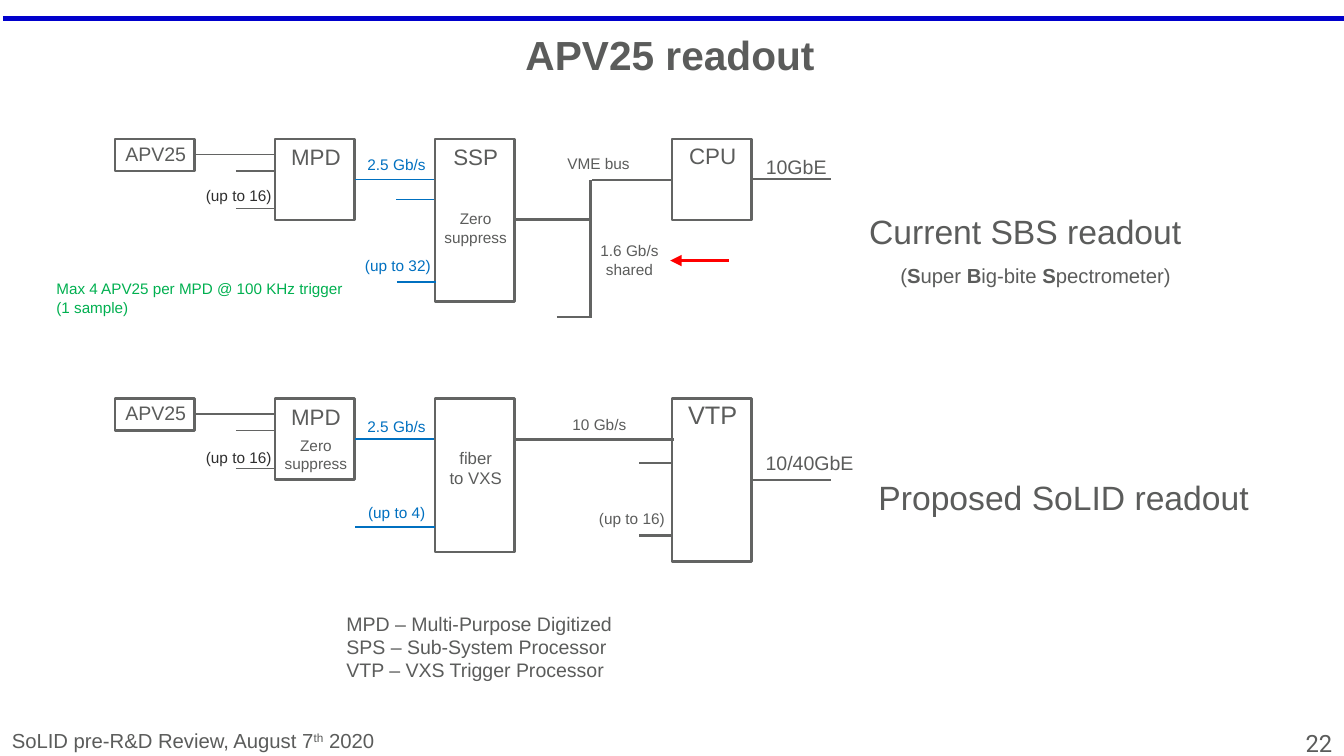
from pptx import Presentation
from pptx.dml.color import RGBColor
from pptx.enum.shapes import MSO_CONNECTOR, MSO_SHAPE
from pptx.enum.text import MSO_ANCHOR, MSO_AUTO_SIZE, PP_ALIGN
from pptx.oxml.ns import qn
from pptx.util import Pt
from lxml.etree import SubElement

GREY = RGBColor(0x5B, 0x5C, 0x5B)
OUTLINE = RGBColor(0x63, 0x64, 0x63)
DARK = RGBColor(0x2E, 0x2E, 0x2E)
BLUE = RGBColor(0x00, 0x70, 0xC0)
GREEN = RGBColor(0x00, 0xB0, 0x50)
RED = RGBColor(0xFF, 0x00, 0x00)
RULE_BLUE = RGBColor(0x00, 0x00, 0xCC)

LEFT, CENTER, RIGHT = PP_ALIGN.LEFT, PP_ALIGN.CENTER, PP_ALIGN.RIGHT
SMALL, MEDIUM, LARGE, HEADING = 12.1, 15.4, 17.6, 26.5
BLOCK_WIDTH = 62.7
APV_X, MPD_X, HUB_X, HOST_X = 90.5, 216.7, 342.5, 529.2
SBS_TOP, SOLID_TOP = 109.4, 313.9


def style(para, size, color=GREY, align=CENTER, bold=False, font="Arial"):
    para.alignment = align
    para.font.size = Pt(size)
    para.font.name = font
    para.font.bold = bold
    para.font.color.rgb = color


def label(page, x, y, width, size, *lines, color=GREY, align=CENTER, font="Arial"):
    """Add a text box with one paragraph per line; return its first paragraph."""
    height = size * 1.2 * max(len(lines), 1) + 7.2
    box = page.shapes.add_textbox(Pt(x), Pt(y), Pt(width), Pt(height))
    frame = box.text_frame
    frame.word_wrap = True
    frame.text = "\n".join(lines)
    for para in frame.paragraphs:
        style(para, size, color, align, font=font)
    return frame.paragraphs[0]


def block(page, x, y, height, size, *lines, inset=3.6, note=None, note_gap=0):
    """Add an outlined module with its name at the top and an optional note."""
    box = page.shapes.add_shape(MSO_SHAPE.RECTANGLE, Pt(x), Pt(y), Pt(BLOCK_WIDTH), Pt(height))
    box.shadow.inherit = False
    box.fill.background()
    box.line.color.rgb = OUTLINE
    box.line.width = Pt(2)
    frame = box.text_frame
    frame.word_wrap = True
    frame.vertical_anchor = MSO_ANCHOR.TOP
    frame.margin_top = Pt(inset)
    frame.margin_left, frame.margin_right, frame.margin_bottom = Pt(1.5), 0, 0
    frame.text = "\n".join(lines)
    for para in frame.paragraphs:
        style(para, size)
    if note:
        para = frame.add_paragraph()
        para.text = note
        para.space_before = Pt(note_gap)
        style(para, SMALL)


def wire(page, x1, y1, x2, y2, color=OUTLINE, width=1.0, arrow=False):
    line = page.shapes.add_connector(MSO_CONNECTOR.STRAIGHT, Pt(x1), Pt(y1), Pt(x2), Pt(y2))
    line.line.color.rgb = color
    line.line.width = Pt(width)
    properties = line._element.spPr
    if arrow:
        SubElement(properties.find(qn("a:ln")), qn("a:tailEnd"), type="triangle")
    SubElement(properties, qn("a:effectLst"))


def front_end(page, top, label_shift=0, **mpd_note):
    """Draw the APV25 chips feeding an MPD and its first fiber."""
    block(page, APV_X, top, 25.2, MEDIUM, "APV25", inset=2.2)
    block(page, MPD_X, top, 64, LARGE, "MPD", **mpd_note)
    wire(page, APV_X + BLOCK_WIDTH, top + 12.2, MPD_X, top + 12.2)
    for drop in (25.2, 55):
        wire(page, 185.8, top + drop, MPD_X, top + drop)
    label(page, 148, top + 33.8 + label_shift, 73, SMALL, "(up to 16)", color=DARK, align=RIGHT)
    label(page, 273, top + 9.4 + label_shift, 78.5, SMALL, "2.5 Gb/s", color=BLUE)
    wire(page, 279.6, top + 31.9, HUB_X, top + 31.9, BLUE)


def sbs_readout(page):
    front_end(page, SBS_TOP)
    block(page, HUB_X, SBS_TOP, 128.2, LARGE, "SSP", note="Zero suppress", note_gap=31)
    block(page, HOST_X, SBS_TOP, 64, LARGE, "CPU", inset=2.2)
    wire(page, 312.2, 157.3, 341.5, 157.3, BLUE)
    wire(page, 312.5, 222.1, 343, 222.1, BLUE)
    label(page, 262.8, 198, 83.5, SMALL, "(up to 32)", color=BLUE, align=RIGHT)

    bus_x, bus_top, bus_bottom = 465.1, 141.8, 249.8
    wire(page, 405.2, 172.8, bus_x, 172.8, width=2)
    wire(page, bus_x, bus_top, bus_x, bus_bottom, width=2)
    wire(page, 466.6, bus_top, HOST_X, bus_top, width=2)
    wire(page, 438.5, bus_bottom, 466.6, bus_bottom, width=2)
    label(page, 428.5, 118.1, 85.7, SMALL, "VME bus")
    label(page, 461.5, 186.5, 68.4, SMALL, "1.6 Gb/s", "shared")
    wire(page, 573.8, 205.2, 527.8, 205.2, RED, 3, arrow=True)

    wire(page, 593, 141.1, 654.5, 141.1)
    label(page, 590, 118.5, 74, MEDIUM, "10GbE")
    label(page, 667, 162.5, 281, HEADING, "Current SBS readout")
    expansion = label(page, 675, 203.5, 281, 16)
    for text, bold in (("(", False), ("S", True), ("uper ", False), ("B", True),
                       ("ig-bite ", False), ("S", True), ("pectrometer)", False)):
        span = expansion.add_run()
        span.text = text
        span.font.bold = bold
    label(page, 37.4, 216.7, 242.6, 12, "Max 4 APV25 per MPD @ 100 KHz trigger (1 sample)",
          color=GREEN, align=LEFT)


def solid_readout(page):
    front_end(page, SOLID_TOP, label_shift=2, note="Zero suppress", note_gap=5)
    block(page, HUB_X, SOLID_TOP, 121, 13.2, "fiber", "to VXS", inset=38.9)
    block(page, HOST_X, SOLID_TOP, 128.2, 19.9, "VTP", inset=0.7)
    wire(page, 279.6, 415, HUB_X, 415, BLUE)
    label(page, 277.9, 393.1, 64.1, SMALL, "(up to 4)", color=BLUE, align=RIGHT)

    wire(page, 406, 346, 530.5, 346, width=2)
    for y in (364.6, 421.9):
        wire(page, 503.3, y, HOST_X, y, width=2)
    label(page, 441, 323.3, 62, SMALL, "10 Gb/s")
    label(page, 454.3, 397.4, 76.3, SMALL, "(up to 16)", align=RIGHT)

    wire(page, 591.9, 378, 654.5, 378)
    label(page, 592.5, 351.4, 90, MEDIUM, "10/40GbE")
    label(page, 684.7, 372.2, 319.7, HEADING, "Proposed SoLID readout", align=LEFT)


def title(page, text):
    holder = page.shapes.title
    holder.left, holder.top, holder.width, holder.height = Pt(71.3), Pt(21.6), Pt(913), Pt(46.8)
    frame = holder.text_frame
    frame.text = text
    frame.auto_size = MSO_AUTO_SIZE.NONE
    frame.vertical_anchor = MSO_ANCHOR.MIDDLE
    frame.margin_left = frame.margin_right = frame.margin_top = frame.margin_bottom = 0
    para = frame.paragraphs[0]
    para.line_spacing = 0.9
    style(para, 32, bold=True)


def footer(page):
    event = label(page, 2.2, 570, 409, 16, align=LEFT)
    for text, raised in (("SoLID pre-R&D Review, August 7", False), ("th", True), (" 2020", False)):
        span = event.add_run()
        span.text = text
        if raised:
            span._r.get_or_add_rPr().set("baseline", "30000")
    label(page, 934, 570.2, 122.2, 18.7, "22", align=RIGHT, font="Roboto")


def main():
    deck = Presentation()
    deck.slide_width, deck.slide_height = Pt(1058.4), Pt(595.44)
    page = deck.slides.add_slide(deck.slide_layouts[5])
    wire(page, 2.2, 14.6, 1058.4, 14.6, RULE_BLUE, 4.5)
    title(page, "APV25 readout")
    sbs_readout(page)
    solid_readout(page)
    label(page, 265.7, 478.1, 262, MEDIUM, "MPD – Multi-Purpose Digitized",
          "SPS – Sub-System Processor", "VTP – VXS Trigger Processor", align=LEFT)
    footer(page)
    deck.save("out.pptx")


if __name__ == "__main__":
    main()
